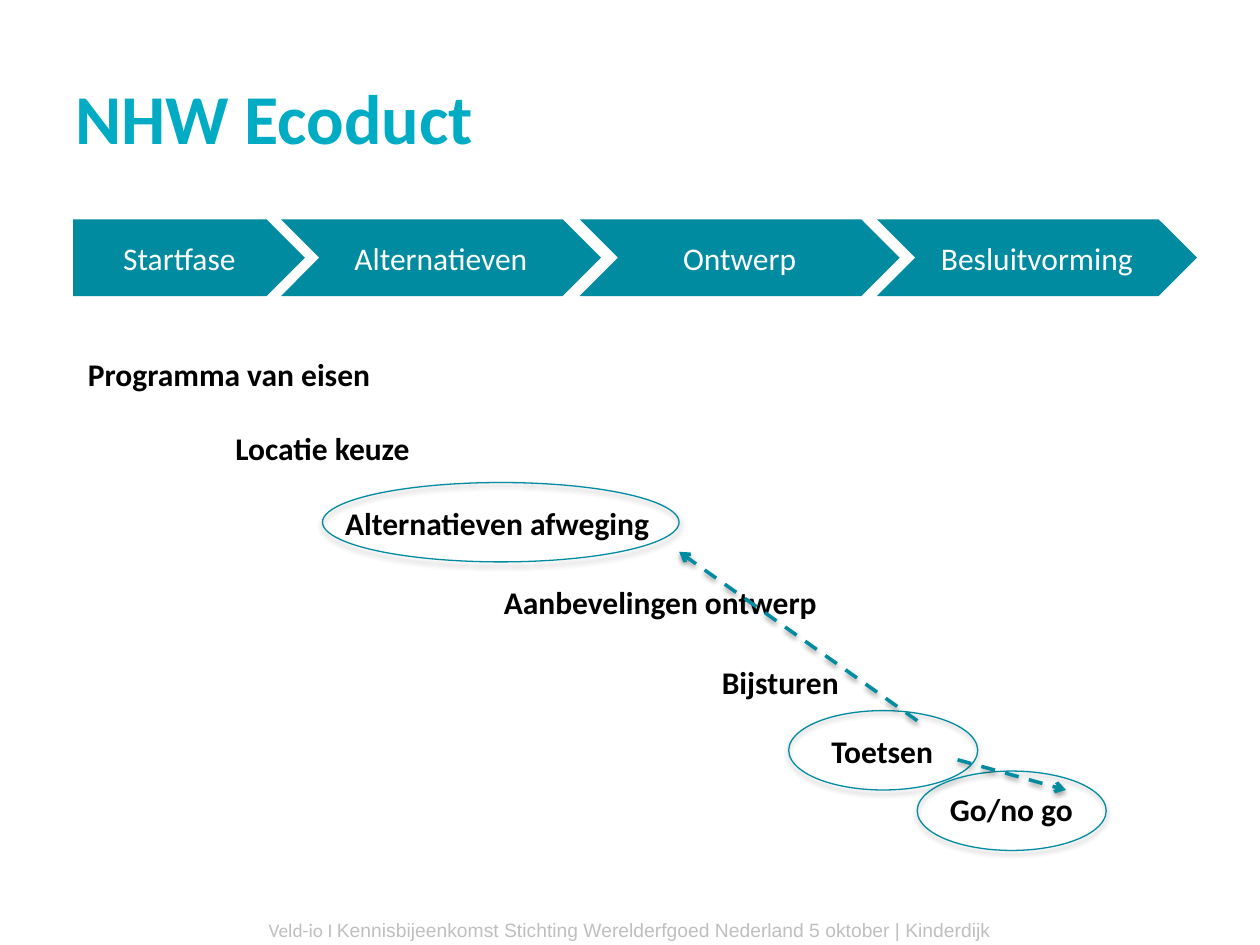
"""Build the NHW Ecoduct process slide."""
from lxml import etree
from pptx import Presentation
from pptx.dml.color import RGBColor
from pptx.enum.dml import MSO_LINE
from pptx.enum.shapes import MSO_CONNECTOR, MSO_SHAPE
from pptx.enum.text import MSO_ANCHOR, PP_ALIGN
from pptx.oxml.ns import qn
from pptx.util import Inches, Pt

TEAL = RGBColor(0x00, 0x8B, 0xA0)
CYAN = RGBColor(0x00, 0xAB, 0xC4)
GREY = RGBColor(0xBF, 0xBF, 0xBF)
BLACK = RGBColor(0, 0, 0)
WHITE = RGBColor(255, 255, 255)


def set_text(shape, text, size, color, bold=False):
    tf = shape.text_frame
    tf.word_wrap = True
    p = tf.paragraphs[0]
    p.text = text
    p.font.size = Pt(size)
    p.font.name = "Calibri"
    p.font.bold = bold
    p.font.color.rgb = color
    return p


def add_shadow(shape, dist, alpha):
    effects = etree.SubElement(shape._element.spPr, qn("a:effectLst"))
    shadow = etree.SubElement(effects, qn("a:outerShdw"), blurRad=str(Pt(3.1)),
                              dist=str(Pt(dist)), dir="5400000", rotWithShape="0")
    color = etree.SubElement(shadow, qn("a:srgbClr"), val="000000")
    etree.SubElement(color, qn("a:alpha"), val=str(alpha * 1000))


prs = Presentation()
prs.slide_width, prs.slide_height = Inches(10), Inches(7.5)
s = prs.slides.add_slide(prs.slide_layouts[6])

title = s.shapes.add_textbox(Inches(0.5), Inches(0.3), Inches(9), Inches(1.25))
title.text_frame.vertical_anchor = MSO_ANCHOR.MIDDLE
set_text(title, "NHW Ecoduct", 40, CYAN, True)

phases = [
    ("Startfase", MSO_SHAPE.PENTAGON, 0.58, 1.84),
    ("Alternatieven", MSO_SHAPE.CHEVRON, 2.23, 2.54),
    ("Ontwerp", MSO_SHAPE.CHEVRON, 4.6, 2.54),
    ("Besluitvorming", MSO_SHAPE.CHEVRON, 6.96, 2.54),
]
for text, kind, x, w in phases:
    sp = s.shapes.add_shape(kind, Inches(x), Inches(1.74), Inches(w), Inches(0.61))
    sp.shadow.inherit = False
    sp.fill.solid()
    sp.fill.fore_color.rgb = TEAL
    sp.line.fill.background()
    sp.text_frame.vertical_anchor = MSO_ANCHOR.MIDDLE
    set_text(sp, text, 18, WHITE).alignment = PP_ALIGN.CENTER

steps = [
    ("Programma van eisen", 0.6, 2.65, 3.36),
    ("Locatie keuze", 1.77, 3.24, 3.31),
    ("Alternatieven afweging", 2.64, 3.83, 3.31),
    ("Aanbevelingen ontwerp", 3.9, 4.46, 3.31),
    ("Bijsturen", 5.63, 5.09, 3.31),
    ("Toetsen", 6.5, 5.64, 1.57),
    ("Go/no go", 7.44, 6.1, 2.5),
]
for text, x, y, w in steps:
    box = s.shapes.add_textbox(Inches(x), Inches(y), Inches(w), Inches(0.67))
    set_text(box, text, 18, BLACK, True).line_spacing = 1.4

footer = s.shapes.add_textbox(Inches(0), Inches(7.24), Inches(10), Inches(0.26))
p = set_text(footer, "Veld-io I ", 11, GREY)
p.alignment = PP_ALIGN.CENTER
r = p.add_run()
r.text = "Kennisbijeenkomst Stichting Werelderfgoed Nederland 5 oktober | Kinderdijk"
r.font.name = "Arial"

for x, y, w in [(6.26, 5.64, 1.5), (7.28, 6.12, 1.5), (2.56, 3.83, 2.83)]:
    sp = s.shapes.add_shape(MSO_SHAPE.OVAL, Inches(x), Inches(y), Inches(w), Inches(0.63))
    sp.fill.background()
    sp.line.color.rgb = TEAL
    sp.line.width = Pt(0.75)
    add_shadow(sp, 1.8, 35)

for x1, y1, x2, y2 in [(7.6, 6.03, 8.46, 6.27), (7.28, 5.72, 5.39, 4.38)]:
    arrow = s.shapes.add_connector(MSO_CONNECTOR.STRAIGHT, Inches(x1), Inches(y1),
                                   Inches(x2), Inches(y2))
    arrow.line.color.rgb = TEAL
    arrow.line.width = Pt(2)
    arrow.line.dash_style = MSO_LINE.DASH
    etree.SubElement(arrow.line._get_or_add_ln(), qn("a:tailEnd"), type="arrow")
    add_shadow(arrow, 1.6, 38)

prs.save("out.pptx")
